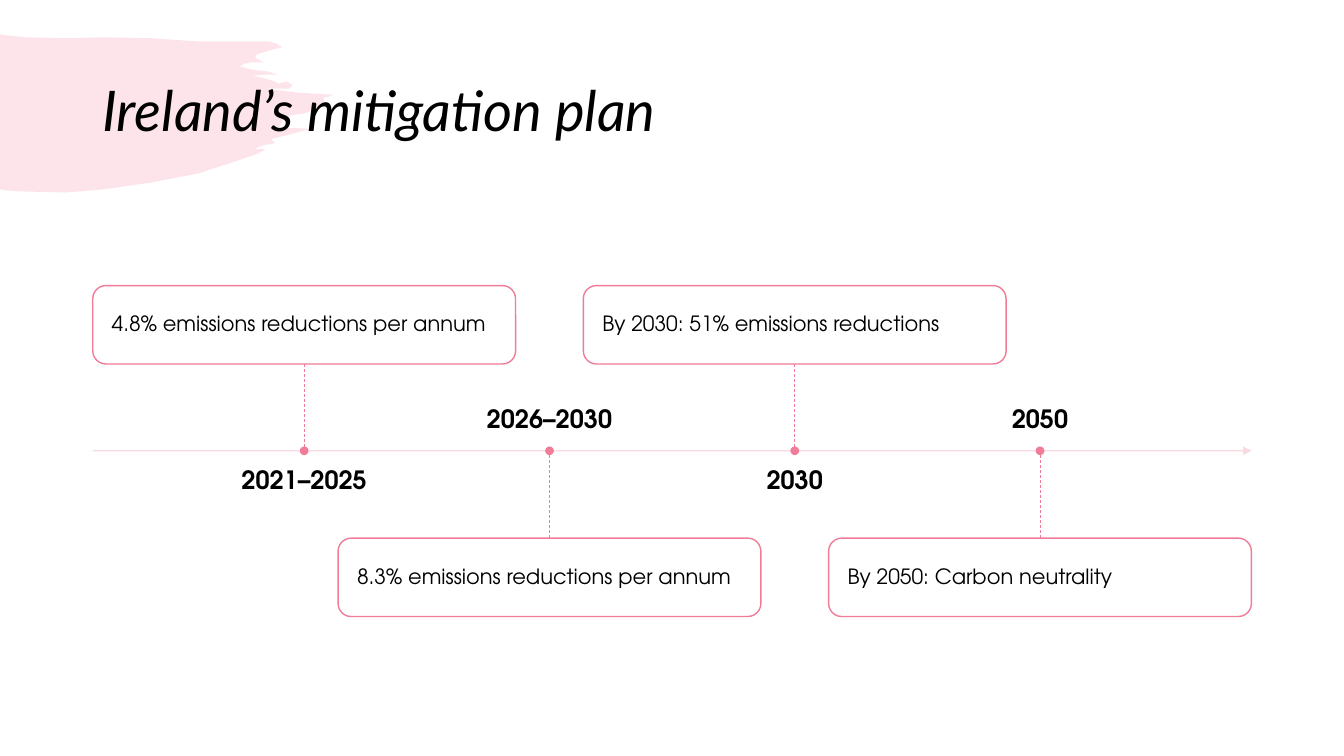
from pptx import Presentation
from pptx.dml.color import RGBColor
from pptx.enum.dml import MSO_LINE
from pptx.enum.shapes import MSO_CONNECTOR, MSO_SHAPE
from pptx.enum.text import MSO_ANCHOR, PP_ALIGN
from pptx.oxml.ns import qn
from pptx.util import Pt
from lxml import etree

STRAIGHT = MSO_CONNECTOR.STRAIGHT
ROUND, OVAL = MSO_SHAPE.ROUNDED_RECTANGLE, MSO_SHAPE.OVAL
TOP, MIDDLE, BOTTOM = MSO_ANCHOR.TOP, MSO_ANCHOR.MIDDLE, MSO_ANCHOR.BOTTOM
LEFT, CENTER = PP_ALIGN.LEFT, PP_ALIGN.CENTER
DASH = MSO_LINE.DASH

ROSE = RGBColor(0xF0, 0x7C, 0x98)
BLUSH = RGBColor(0xF9, 0xD7, 0xDD)
WHITE = RGBColor(0xFF, 0xFF, 0xFF)
BLACK = RGBColor(0, 0, 0)

UNIT = Pt(0.72)
BRUSH = [
    (0, 34), (6, 35), (25, 37), (66, 38), (102, 37), (151, 38), (194, 41),
    (248, 41), (266, 41), (274, 43), (280, 47), (271, 49), (255, 54),
    (253, 57), (256, 59), (262, 62), (250, 62), (243, 63), (238, 66),
    (246, 68), (256, 70), (266, 71), (275, 74), (263, 74), (251, 75),
    (263, 78), (273, 81), (276, 83), (280, 82), (284, 81), (288, 83),
    (290, 85), (287, 88), (284, 88), (274, 88), (263, 88), (296, 92),
    (330, 94), (326, 96), (321, 97), (322, 103), (318, 106), (311, 107),
    (307, 111), (300, 113), (291, 114), (283, 116), (280, 120), (278, 125),
    (274, 128), (291, 127), (308, 128), (289, 133), (269, 138), (273, 142),
    (262, 144), (252, 148), (258, 148), (263, 148), (257, 152), (234, 160),
    (197, 172), (151, 181), (102, 188), (65, 191), (23, 190), (7, 189), (0, 188),
]

EDGE, AXIS, FIRST, STEP = 66.3, 322, 217.3, 175.2
WIDE, HIGH, DOT = 302, 56, 5.2
EVENTS = [
    ("2021–2025", "4.8% emissions reductions per annum"),
    ("2026–2030", "8.3% emissions reductions per annum"),
    ("2030", "By 2030: 51% emissions reductions"),
    ("2050", "By 2050: Carbon neutrality"),
]


class Deck:
    face = "TeX Gyre Adventor"

    def __init__(self, slide):
        self.shapes = slide.shapes

    def fade(self, shape, share):
        color = shape._element.spPr.find(".//" + qn("a:srgbClr"))
        etree.SubElement(color, qn("a:alpha"), val=str(share * 1000))

    def paint(self, shape, fill):
        shape.shadow.inherit = False
        shape.fill.solid()
        shape.fill.fore_color.rgb = fill

    def brush(self, spots):
        pen = self.shapes.build_freeform(*spots[0], scale=UNIT)
        pen.add_line_segments(spots[1:], close=True)
        shape = pen.convert_to_shape()
        self.paint(shape, ROSE)
        self.fade(shape, 20)
        shape.line.fill.background()

    def shape(self, kind, x, y, w, h, fill):
        shape = self.shapes.add_shape(kind, Pt(x), Pt(y), Pt(w), Pt(h))
        self.paint(shape, fill)
        shape.line.color.rgb = ROSE
        shape.line.width = Pt(1)
        return shape

    def label(self, shape, text, size, inset, anchor, align=LEFT, face=face):
        frame = shape.text_frame
        frame.word_wrap = True
        frame.vertical_anchor = anchor
        frame.margin_left = frame.margin_right = Pt(inset)
        frame.margin_top = frame.margin_bottom = Pt(inset)
        para = frame.paragraphs[0]
        para.text = text
        para.alignment = align
        para.line_spacing = 0.9
        font = para.font
        font.name, font.size, font.color.rgb = face, Pt(size), BLACK
        return font

    def text(self, x, y, w, h, *style, **more):
        box = self.shapes.add_textbox(Pt(x), Pt(y), Pt(w), Pt(h))
        return self.label(box, *style, **more)

    def card(self, x, y, text):
        box = self.shape(ROUND, x, y, WIDE, HIGH, WHITE)
        self.label(box, text, 15, 10.8, MIDDLE)

    def line(self, x1, y1, x2, y2, color, width):
        line = self.shapes.add_connector(STRAIGHT, Pt(x1), Pt(y1), Pt(x2), Pt(y2))
        line.line.color.rgb = color
        line.line.width = Pt(width)
        etree.SubElement(line._element.spPr, qn("a:effectLst"))
        return line

    def stem(self, x, y):
        self.line(x, y, x, AXIS, ROSE, 0.5).line.dash_style = DASH

    def arrow(self, x1, x2, y):
        line = self.line(x1, y, x2, y, BLUSH, 1)
        self.fade(line, 90)
        stroke = line._element.spPr.find(qn("a:ln"))
        etree.SubElement(stroke, qn("a:tailEnd"), type="triangle")

    def event(self, mid, above, date, text):
        top = 204 if above else 384.4
        self.stem(mid, top + HIGH if above else top)
        self.card(mid - WIDE / 2, top, text)
        y, anchor = (334, TOP) if above else (273, BOTTOM)
        self.text(mid - 133, y, 266, 36.7, date, 18, 0, anchor, CENTER).bold = True
        self.shape(OVAL, mid - DOT / 2, AXIS - DOT / 2, DOT, DOT, ROSE)


def main():
    show = Presentation()
    show.slide_width, show.slide_height = Pt(960), Pt(540)
    deck = Deck(show.slides.add_slide(show.slide_layouts[6]))
    deck.brush(BRUSH)
    title = deck.text(66, 28.8, 828, 104.4, "Ireland’s mitigation plan", 40, 7.2,
                      MIDDLE, face="Lato")
    title.italic = True
    deck.arrow(EDGE, 894, AXIS)
    for i, (date, text) in enumerate(EVENTS):
        deck.event(FIRST + i * STEP, i % 2 == 0, date, text)
    show.save("out.pptx")


if __name__ == "__main__":
    main()
